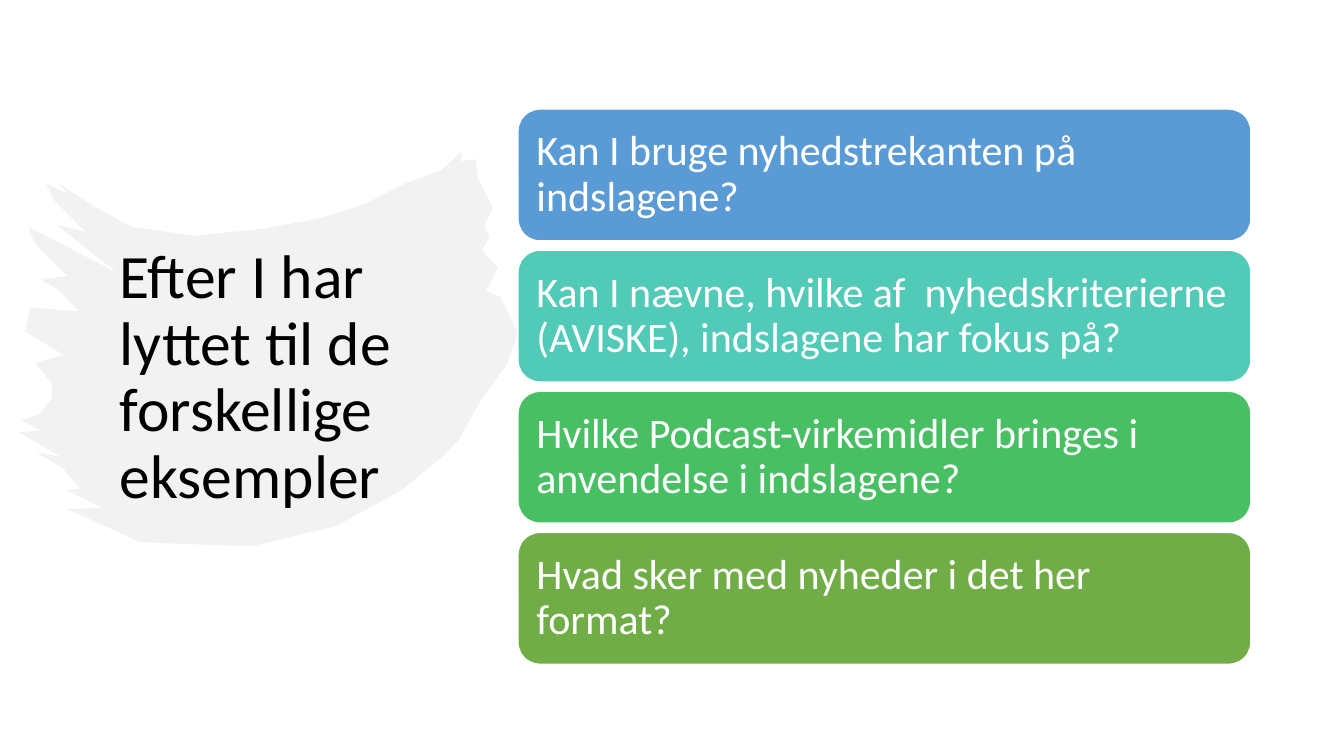
import pptx
import pptx.dml.color
import pptx.enum.shapes
import pptx.enum.text
import pptx.oxml
import pptx.util
from pptx.util import Pt


def color(hex_string):
    return pptx.dml.color.RGBColor.from_string(hex_string)


def write_text(shape, text, size, hex_string):
    frame = shape.text_frame
    frame.word_wrap = True
    frame.vertical_anchor = pptx.enum.text.MSO_ANCHOR.MIDDLE
    paragraph = frame.paragraphs[0]
    paragraph.text = text
    paragraph.alignment = pptx.enum.text.PP_ALIGN.LEFT
    paragraph.line_spacing = 0.9
    paragraph.font.name = "Calibri"
    paragraph.font.size = Pt(size)
    paragraph.font.color.rgb = color(hex_string)
    return frame


presentation = pptx.Presentation()
presentation.slide_width = Pt(960)
presentation.slide_height = Pt(540)
slide = presentation.slides.add_slide(presentation.slide_layouts[6])

# Brush stroke outline, in hundredths of an inch (0.72 pt)
brush_outline = [
    # Right edge, going down
    (458, 150), (457, 160), (472, 158), (474, 177), (489, 206), (480, 225),
    (486, 235), (478, 248), (494, 266), (482, 289), (496, 294), (514, 330),
    (503, 361), (476, 399), (456, 435),
    # Bottom edge, going left
    (441, 451), (399, 486), (333, 522), (249, 542), (139, 538), (96, 518),
    (66, 505), (102, 504), (66, 486), (80, 485), (62, 464),
    # Left edge, going up
    (36, 449), (60, 453), (19, 429), (41, 427), (20, 417), (39, 411), (51, 396),
    (52, 381), (35, 360), (63, 352), (25, 329), (30, 305), (78, 309), (59, 288),
    (40, 277), (67, 274), (35, 242), (28, 225), (117, 271), (56, 223), (85, 230),
    (53, 198), (46, 182), (67, 192), (58, 182),
    # Top edge, going right
    (94, 205), (130, 225), (192, 234), (260, 227), (316, 217), (361, 203),
    (402, 182), (438, 169),
]
builder = slide.shapes.build_freeform(*brush_outline[0], scale=Pt(0.72))
builder.add_line_segments(brush_outline[1:], close=True)
brush = builder.convert_to_shape()
brush.shadow.inherit = False
brush.line.fill.background()
brush.fill.solid()
brush.fill.fore_color.rgb = color("E7E6E6")
brush_color = brush._element.spPr.find(".//" + pptx.oxml.ns.qn("a:srgbClr"))
alpha = pptx.oxml.parse_xml(
    '<a:alpha xmlns:a="http://schemas.openxmlformats.org/drawingml/2006/main" val="50000"/>')
brush_color.append(alpha)

# Title
title = slide.shapes.add_textbox(Pt(78.48), Pt(54), Pt(275), Pt(432.7))
write_text(title, "Efter I har lyttet til de forskellige eksempler", 44, "000000")

# Question cards
questions = [
    ("Kan I bruge nyhedstrekanten på indslagene?", "5B9BD5"),
    ("Kan I nævne, hvilke af  nyhedskriterierne (AVISKE), indslagene har fokus på?", "52CAB8"),
    ("Hvilke Podcast-virkemidler bringes i anvendelse i indslagene?", "49BF64"),
    ("Hvad sker med nyheder i det her format?", "70AD47"),
]
for index, (question, fill) in enumerate(questions):
    card = slide.shapes.add_shape(
        pptx.enum.shapes.MSO_SHAPE.ROUNDED_RECTANGLE,
        Pt(370), Pt(77.9 + index * 100.8), Pt(523.5), Pt(94.2))
    card.shadow.inherit = False
    card.fill.solid()
    card.fill.fore_color.rgb = color(fill)
    card.line.color.rgb = color("FFFFFF")
    card.line.width = Pt(1)
    frame = write_text(card, question, 30, "FFFFFF")
    frame.margin_left = frame.margin_right = Pt(8.6)
    frame.margin_top = frame.margin_bottom = Pt(8.6)

presentation.save("out.pptx")
